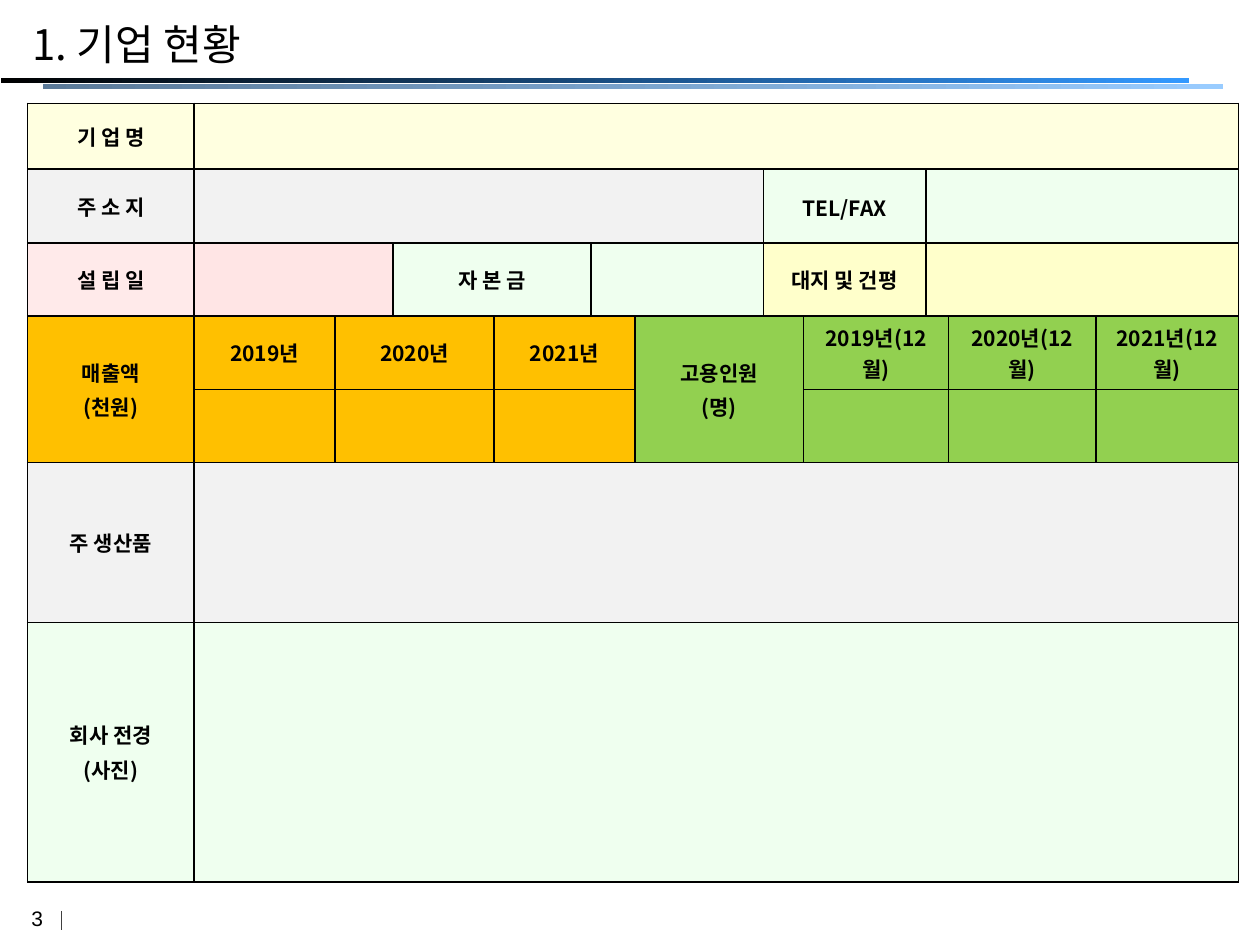
from dataclasses import dataclass

from lxml.etree import SubElement
from pptx import Presentation
from pptx.dml.color import RGBColor
from pptx.enum.shapes import MSO_CONNECTOR, MSO_SHAPE
from pptx.enum.text import MSO_ANCHOR, PP_ALIGN
from pptx.oxml import parse_xml
from pptx.oxml.ns import nsdecls, qn
from pptx.util import Inches, Pt


@dataclass(frozen=True)
class Theme:
    korean: str = "Noto Sans CJK KR"
    latin: str = "Arial"
    title_size: int = 24
    body_size: int = 12
    ink: str = "000000"
    divider: str = "404040"
    dark_bar: tuple = ("000000", "3399FF")
    light_bar: tuple = ("5B7A99", "99CCFF")
    # Cell fills: colour and opacity in percent
    cream: tuple = ("FFFF66", 20)
    grey: tuple = ("EAEAEA", 60)
    mint: tuple = ("CCFFCC", 30)
    pink: tuple = ("FFCCCC", 40)
    rose: tuple = ("FFCCCC", 50)
    yellow: tuple = ("FFFF99", 50)
    orange: tuple = ("FFC000", 100)
    green: tuple = ("92D050", 100)


THEME = Theme()

COLUMN_WIDTHS = [1.32, 1.12, 0.46, 0.8, 0.77, 0.35, 1.02, 0.32, 0.97, 0.18, 1.17, 1.13]
ROW_HEIGHTS = [0.52, 0.59, 0.58, 0.58, 0.58, 1.27, 2.06]

# Each row: (first column, columns spanned, rows spanned, text, fill)
COMPANY_ROWS = [
    [(0, 1, 1, "기 업 명", THEME.cream), (1, 11, 1, "", THEME.cream)],
    [(0, 1, 1, "주 소 지", THEME.grey), (1, 6, 1, "", THEME.grey),
     (7, 2, 1, "TEL/FAX", THEME.mint), (9, 3, 1, "", THEME.mint)],
    [(0, 1, 1, "설 립 일", THEME.pink), (1, 2, 1, "", THEME.rose),
     (3, 2, 1, "자 본 금", THEME.mint), (5, 2, 1, "", THEME.mint),
     (7, 2, 1, "대지 및 건평", THEME.yellow), (9, 3, 1, "", THEME.yellow)],
    [(0, 1, 2, "매출액\n(천원)", THEME.orange), (1, 1, 1, "2019년", THEME.orange),
     (2, 2, 1, "2020년", THEME.orange), (4, 2, 1, "2021년", THEME.orange),
     (6, 2, 2, "고용인원\n(명)", THEME.green), (8, 2, 1, "2019년(12월)", THEME.green),
     (10, 1, 1, "2020년(12월)", THEME.green), (11, 1, 1, "2021년(12월)", THEME.green)],
    [(1, 1, 1, "", THEME.orange), (2, 2, 1, "", THEME.orange), (4, 2, 1, "", THEME.orange),
     (8, 2, 1, "", THEME.green), (10, 1, 1, "", THEME.green), (11, 1, 1, "", THEME.green)],
    [(0, 1, 1, "주 생산품", THEME.grey), (1, 11, 1, "", THEME.grey)],
    [(0, 1, 1, "회사 전경\n(사진)", THEME.mint), (1, 11, 1, "", THEME.mint)],
]


def style_paragraph(paragraph, font_name, size, bold=False):
    font = paragraph.font
    font.name, font.size, font.bold = font_name, Pt(size), bold
    font.color.rgb = RGBColor.from_string(THEME.ink)
    # Hangul takes its typeface from the East Asian slot
    properties = paragraph._p.pPr.find(qn("a:defRPr"))
    SubElement(properties, qn("a:ea")).set("typeface", font_name)


def add_text(slide, box, text, font_name, size, align, wrap=True):
    frame = slide.shapes.add_textbox(*map(Inches, box)).text_frame
    frame.word_wrap = wrap
    paragraph = frame.paragraphs[0]
    paragraph.text = text
    paragraph.alignment = align
    style_paragraph(paragraph, font_name, size)


def add_gradient_bar(slide, box, colors):
    bar = slide.shapes.add_shape(MSO_SHAPE.RECTANGLE, *map(Inches, box))
    bar.shadow.inherit = False
    bar.line.fill.background()
    bar.fill.gradient()
    bar.fill.gradient_angle = 0
    for stop, color in zip(bar.fill.gradient_stops, colors):
        stop.color.rgb = RGBColor.from_string(color)


def add_divider(slide, x, top, bottom):
    divider = slide.shapes.add_connector(
        MSO_CONNECTOR.STRAIGHT, Inches(x), Inches(top), Inches(x), Inches(bottom))
    divider.line.color.rgb = RGBColor.from_string(THEME.divider)
    divider.line.width = Pt(0.75)
    SubElement(divider._element.spPr, qn("a:effectLst"))


def add_borders(cell):
    properties = cell._tc.get_or_add_tcPr()
    for position, side in enumerate(("lnL", "lnR", "lnT", "lnB")):
        properties.insert(position, parse_xml(
            f'<a:{side} {nsdecls("a")} w="{Pt(1)}"><a:solidFill>'
            f'<a:srgbClr val="{THEME.ink}"/></a:solidFill></a:{side}>'))


def fill_cell(cell, fill):
    color, opacity = fill
    cell.fill.solid()
    cell.fill.fore_color.rgb = RGBColor.from_string(color)
    if opacity < 100:
        rgb = cell._tc.tcPr.find(qn("a:solidFill")).find(qn("a:srgbClr"))
        SubElement(rgb, qn("a:alpha")).set("val", str(opacity * 1000))


def write_cell(cell, text):
    cell.vertical_anchor = MSO_ANCHOR.MIDDLE
    cell.text = text
    for paragraph in cell.text_frame.paragraphs:
        paragraph.alignment = PP_ALIGN.CENTER
        if text == "TEL/FAX":
            paragraph.line_spacing = 1.1
        else:
            paragraph.space_before = Pt(0.2 * THEME.body_size)
        style_paragraph(paragraph, THEME.korean, THEME.body_size, bold=True)


def add_company_table(slide, left, top):
    table = slide.shapes.add_table(
        len(ROW_HEIGHTS), len(COLUMN_WIDTHS), Inches(left), Inches(top),
        Inches(sum(COLUMN_WIDTHS)), Inches(sum(ROW_HEIGHTS))).table
    table.first_row = table.horz_banding = False
    for column, width in zip(table.columns, COLUMN_WIDTHS):
        column.width = Inches(width)
    for row, height in zip(table.rows, ROW_HEIGHTS):
        row.height = Inches(height)

    for row, entries in enumerate(COMPANY_ROWS):
        for first, columns, rows, text, fill in entries:
            cell = table.cell(row, first)
            if columns * rows > 1:
                cell.merge(table.cell(row + rows - 1, first + columns - 1))
            fill_cell(cell, fill)
            if text:
                write_cell(cell, text)
    for cell in table.iter_cells():
        add_borders(cell)


def main():
    deck = Presentation()
    deck.slide_width, deck.slide_height = Inches(10), Inches(7.5)
    slide = deck.slides.add_slide(deck.slide_layouts[6])

    # Page number
    add_text(slide, (-0.05, 7.14, 0.69, 0.35), "3", THEME.latin, THEME.body_size,
             PP_ALIGN.CENTER, wrap=False)
    add_divider(slide, 0.49, 7.23, 7.38)

    # Heading with its double rule
    add_gradient_bar(slide, (0.01, 0.62, 9.43, 0.04), THEME.dark_bar)
    add_gradient_bar(slide, (0.34, 0.67, 9.37, 0.04), THEME.light_bar)
    add_text(slide, (0.16, 0.1, 8.37, 0.64), "1. 기업 현황", THEME.korean,
             THEME.title_size, PP_ALIGN.LEFT)

    # Company overview
    add_company_table(slide, 0.22, 0.82)

    deck.save("out.pptx")


if __name__ == "__main__":
    main()
